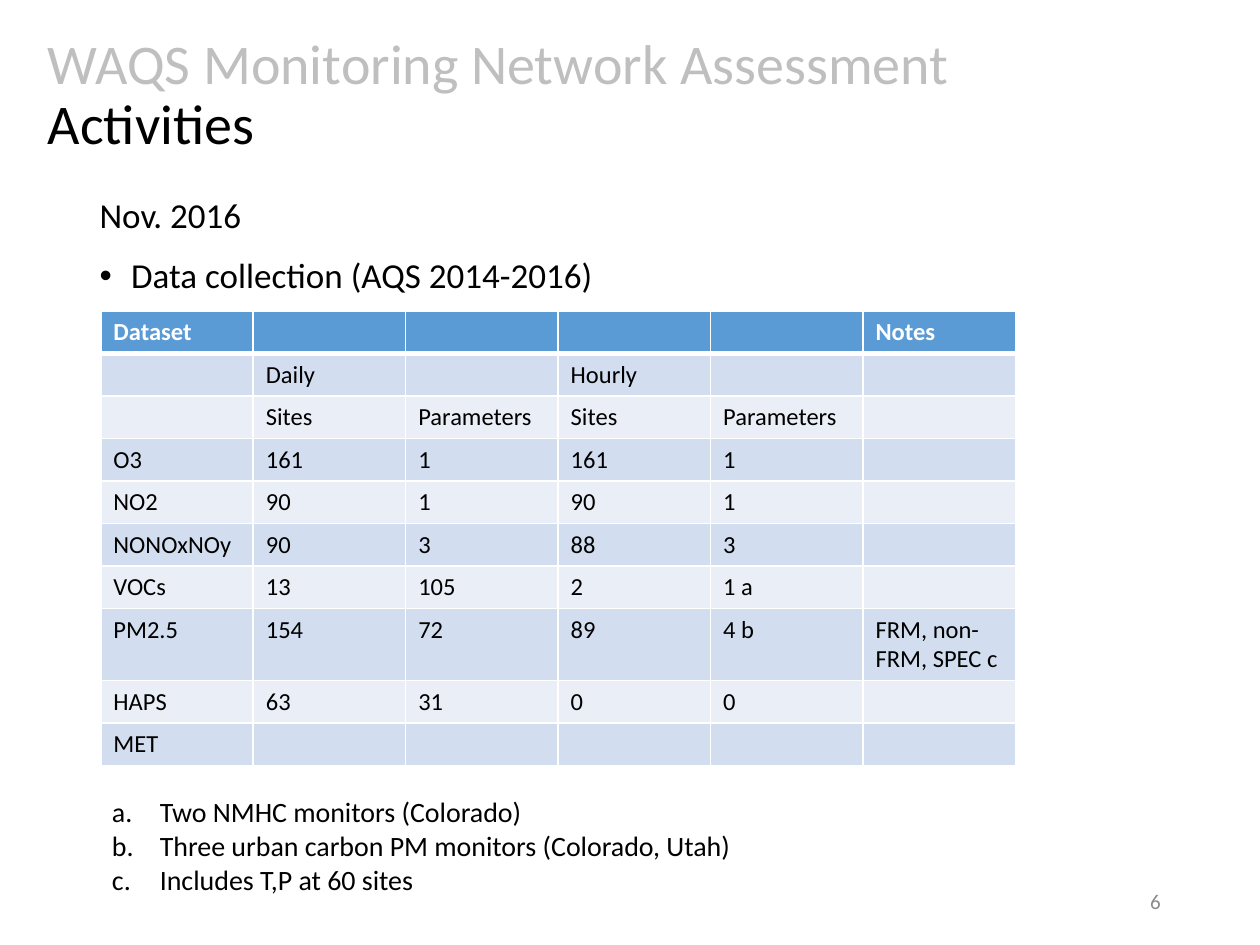
from lxml import etree
from pptx import Presentation
from pptx import util as u
from pptx.dml.color import RGBColor
from pptx.enum import text
from pptx.oxml import ns

COLORS = {
    "ink": "000000",
    "muted": "BFBFBF",
    "number": "8C8C8C",
    "white": "FFFFFF",
    "header": "5B9BD5",
    "band_dark": "D2DEEF",
    "band_light": "EAEFF7",
}

# Table content, header row first
ROWS = [
    ["Dataset", "", "", "", "", "Notes"],
    ["", "Daily", "", "Hourly", "", ""],
    ["", "Sites", "Parameters", "Sites", "Parameters", ""],
    ["O3", "161", "1", "161", "1", ""],
    ["NO2", "90", "1", "90", "1", ""],
    ["NONOxNOy", "90", "3", "88", "3", ""],
    ["VOCs", "13", "105", "2", "1 a", ""],
    ["PM2.5", "154", "72", "89", "4 b", "FRM, non-FRM, SPEC c"],
    ["HAPS", "63", "31", "0", "0", ""],
    ["MET", "", "", "", "", ""],
]
FOOTNOTES = [
    "Two NMHC monitors (Colorado)",
    "Three urban carbon PM monitors (Colorado, Utah)",
    "Includes T,P at 60 sites",
]


def add_element(parent, tag, **attributes):
    element = etree.SubElement(parent, ns.qn(tag))
    for name, value in attributes.items():
        element.set(name, str(value))
    return element


def write(paragraph, words, size=20, color="ink", bold=False, align=None,
          line=None, before=None):
    """Add a formatted run to a paragraph."""
    if align is not None:
        paragraph.alignment = align
    if line is not None:
        paragraph.line_spacing = line
    if before is not None:
        paragraph.space_before = u.Pt(before)
    if not words:
        add_element(paragraph._p, "a:endParaRPr", sz=size * 100)
        return
    run = paragraph.add_run()
    run.text = words
    run.font.name = "Calibri"
    run.font.size = u.Pt(size)
    run.font.bold = bold
    run.font.color.rgb = RGBColor.from_string(COLORS[color])


def set_bullet(paragraph, indent=0, tag="a:buNone", **attributes):
    properties = paragraph._p.get_or_add_pPr()
    properties.set("marL", str(u.Inches(indent)))
    properties.set("indent", str(-u.Inches(indent)))
    if tag == "a:buChar":
        add_element(properties, "a:buFont", typeface="Arial")
    add_element(properties, tag, **attributes)


def set_borders(cell, top=1, bottom=1):
    properties = cell._tc.get_or_add_tcPr()
    for side, width in (("L", 1), ("R", 1), ("T", top), ("B", bottom)):
        border = add_element(properties, "a:ln" + side, w=u.Pt(width))
        fill = add_element(border, "a:solidFill")
        add_element(fill, "a:srgbClr", val=COLORS["white"])


class SlideBuilder:
    def __init__(self, slide):
        self.slide = slide

    def place(self, shape, left, top, width, height):
        shape.left, shape.top = u.Inches(left), u.Inches(top)
        shape.width, shape.height = u.Inches(width), u.Inches(height)
        shape.text_frame.auto_size = text.MSO_AUTO_SIZE.NONE
        return shape.text_frame

    def title(self, first, second, *box):
        frame = self.place(self.slide.shapes.title, *box)
        frame.vertical_anchor = text.MSO_ANCHOR.MIDDLE
        paragraph = frame.paragraphs[0]
        write(paragraph, first, 32, "muted", align=text.PP_ALIGN.LEFT, line=0.9)
        paragraph.add_line_break()
        write(paragraph, second, 32)

    def body(self, heading, item, *box):
        frame = self.place(self.slide.placeholders[1], *box)
        paragraph = frame.paragraphs[0]
        write(paragraph, heading, line=0.9, before=10)
        set_bullet(paragraph)
        paragraph = frame.add_paragraph()
        write(paragraph, item, line=0.9, before=13)
        set_bullet(paragraph, 0.25, "a:buChar", char="•")

    def text_box(self, *box):
        shape = self.slide.shapes.add_textbox(*map(u.Inches, box))
        shape.text_frame.word_wrap = True
        return shape.text_frame

    def footnotes(self, notes, *box):
        frame = self.text_box(*box)
        frame.word_wrap = False
        frame.auto_size = text.MSO_AUTO_SIZE.SHAPE_TO_FIT_TEXT
        for index, note in enumerate(notes):
            paragraph = frame.add_paragraph() if index else frame.paragraphs[0]
            write(paragraph, note, 16)
            set_bullet(paragraph, 0.38, "a:buAutoNum", type="alphaLcPeriod")

    def page_number(self, number, *box):
        frame = self.text_box(*box)
        frame.vertical_anchor = text.MSO_ANCHOR.MIDDLE
        write(frame.paragraphs[0], number, 12, "number", align=text.PP_ALIGN.RIGHT)

    def table(self, rows, *box):
        table = self.slide.shapes.add_table(
            len(rows), len(rows[0]), *map(u.Inches, box)).table
        for row_index, values in enumerate(rows):
            # The row with a two-line note is taller
            table.rows[row_index].height = u.Inches(0.49 if len(values[-1]) > 10 else 0.29)
            is_header = row_index == 0
            band = "header" if is_header else ("band_light", "band_dark")[row_index % 2]
            for column_index, value in enumerate(values):
                cell = table.cell(row_index, column_index)
                write(cell.text_frame.paragraphs[0], value, 14,
                      "white" if is_header else "ink", bold=is_header)
                set_borders(cell, top=3 if row_index == 1 else 1,
                            bottom=3 if is_header else 1)
                cell.fill.solid()
                cell.fill.fore_color.rgb = RGBColor.from_string(COLORS[band])


def main():
    presentation = Presentation()
    presentation.slide_width = u.Inches(10)
    presentation.slide_height = u.Inches(7.5)
    slide = presentation.slides.add_slide(presentation.slide_layouts[1])
    builder = SlideBuilder(slide)

    # Heading and list
    builder.title("WAQS Monitoring Network Assessment", "Activities",
                  0.28, 0.17, 9.03, 1.19)
    builder.body("Nov. 2016", "Data collection (AQS 2014-2016)",
                 0.69, 1.52, 8.62, 4.39)

    # Data, its footnotes and the page number
    builder.table(ROWS, 0.8, 2.47, 7.26, 3.1)
    builder.footnotes(FOOTNOTES, 0.79, 6.26, 5.18, 0.91)
    builder.page_number("6", 7.06, 6.95, 2.25, 0.4)

    presentation.save("out.pptx")


if __name__ == "__main__":
    main()
